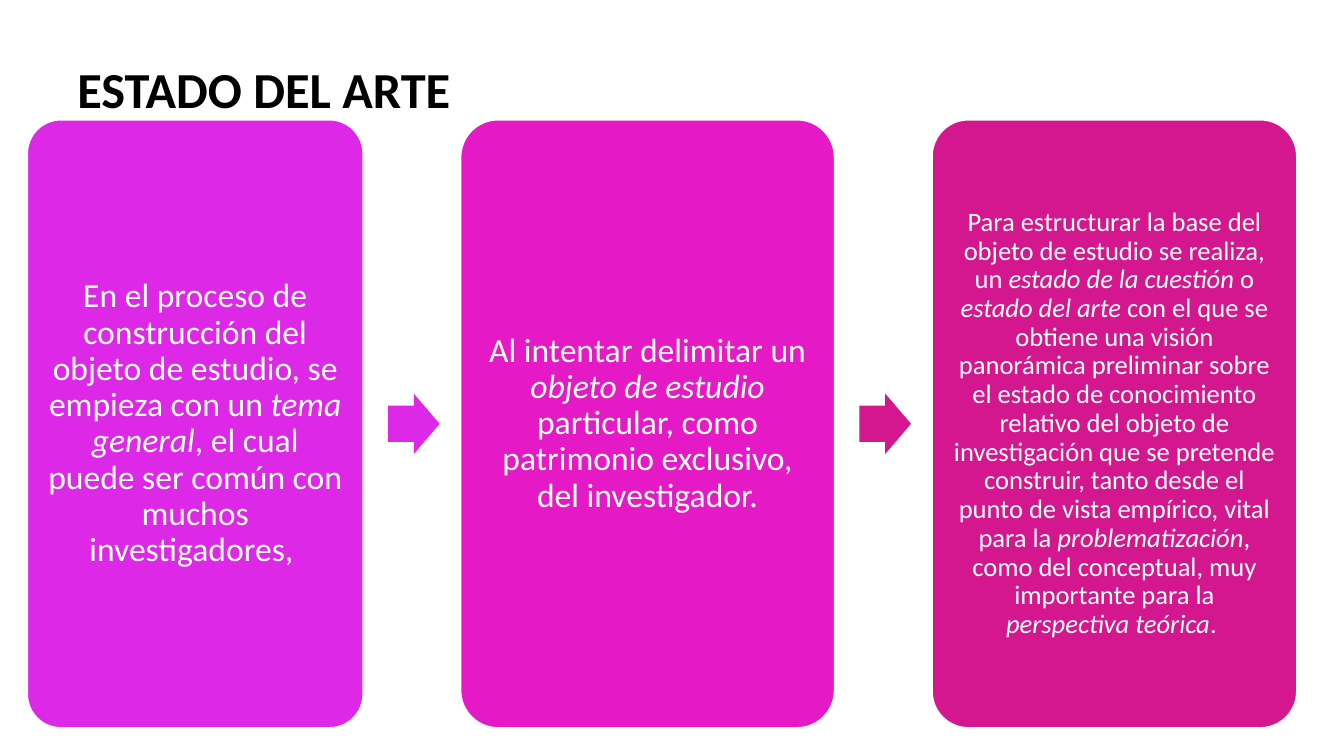
import pptx
import pptx.util
import pptx.dml.color
import pptx.enum.shapes
import pptx.enum.text

Cm = pptx.util.Cm
Pt = pptx.util.Pt
MSO_SHAPE = pptx.enum.shapes.MSO_SHAPE
FONT = "Calibri"
COLORS = {
    "white": "FFFFFF",
    "black": "000000",
    "violet": "DD29E7",
    "magenta": "E519C5",
    "pink": "D5178F",
}
CARD_GAP = 2.46
ARROW_OFFSET, ARROW_W, ARROW_H = 0.63, 1.3, 1.52

# Each card: width, colour, text size, inset, and text pieces alternating plain and italic
CARDS = [
    (8.46, "violet", 24, 0.25, [
        "En el proceso de construcción del objeto de estudio, se empieza con un ",
        "tema general",
        ", el cual puede ser común con muchos investigadores, ",
    ]),
    (9.42, "magenta", 24, 0.25, [
        "Al intentar delimitar un ",
        "objeto de estudio ",
        "particular, como patrimonio exclusivo, del investigador.",
    ]),
    (9.19, "pink", 19, 0.2, [
        "Para estructurar la base del objeto de estudio se realiza, un ",
        "estado de la cuestión ",
        "o ",
        "estado del arte ",
        "con el que se obtiene una visión panorámica preliminar sobre el estado "
        "de conocimiento relativo del objeto de investigación que se pretende "
        "construir, tanto desde el punto de vista empírico, vital para la ",
        "problematización",
        ", como del conceptual, muy importante para la ",
        "perspectiva teórica",
        ". ",
    ]),
]
ARROW_COLORS = ["violet", "pink"]


def rgb(name):
    """Return the named colour."""
    return pptx.dml.color.RGBColor.from_string(COLORS[name])


def format_run(r, size, color, bold=False, italic=False):
    """Apply the slide font to a run."""
    r.font.name = FONT
    r.font.size = Pt(size)
    r.font.bold = bold
    r.font.italic = italic
    r.font.color.rgb = rgb(color)


def add_title(s, x, y, w, h):
    """Place the slide title in the given box."""
    tf = s.shapes.add_textbox(Cm(x), Cm(y), Cm(w), Cm(h)).text_frame
    tf.word_wrap = True
    tf.text = "ESTADO DEL ARTE"
    p = tf.paragraphs[0]
    p.line_spacing = 0.9
    format_run(p.runs[0], 36, "black", bold=True)


def add_filled(s, kind, x, y, w, h, color, adjustments):
    """Place a filled preset shape without shadow."""
    sp = s.shapes.add_shape(kind, Cm(x), Cm(y), Cm(w), Cm(h))
    sp.shadow.inherit = False
    sp.fill.solid()
    sp.fill.fore_color.rgb = rgb(color)
    sp.line.fill.background()
    for i, value in enumerate(adjustments):
        sp.adjustments[i] = value
    return sp


def add_card(s, x, y, w, h, color, size, inset, pieces):
    """Place a rounded card whose text alternates plain and italic pieces."""
    sp = add_filled(s, MSO_SHAPE.ROUNDED_RECTANGLE, x, y, w, h, color, [0.1])
    sp.line.color.rgb = rgb("white")
    sp.line.width = Pt(1)
    tf = sp.text_frame
    tf.word_wrap = True
    tf.vertical_anchor = pptx.enum.text.MSO_ANCHOR.MIDDLE
    tf.margin_left = tf.margin_right = tf.margin_top = tf.margin_bottom = Cm(inset)
    p = tf.paragraphs[0]
    p.alignment = pptx.enum.text.PP_ALIGN.CENTER
    p.line_spacing = 0.9
    for i, piece in enumerate(pieces):
        r = p.add_run()
        r.text = piece
        format_run(r, size, "white", italic=i % 2 == 1)


def add_process(s, x, y, h):
    """Place the row of cards with an arrow in each gap."""
    for i, (w, color, size, inset, pieces) in enumerate(CARDS):
        add_card(s, x, y, w, h, color, size, inset, pieces)
        x += w
        if i < len(ARROW_COLORS):
            add_filled(s, MSO_SHAPE.RIGHT_ARROW, x + ARROW_OFFSET, y + (h - ARROW_H) / 2,
                       ARROW_W, ARROW_H, ARROW_COLORS[i], [0.6, 0.5])
        x += CARD_GAP


def main():
    """Build and save the slide."""
    prs = pptx.Presentation()
    prs.slide_width = Cm(33.87)
    prs.slide_height = Cm(19.05)
    s = prs.slides.add_slide(prs.slide_layouts[6])
    add_title(s, 1.7, 1.52, 29.6, 3.15)
    add_process(s, 0.69, 3.02, 15.32)
    prs.save("out.pptx")


if __name__ == "__main__":
    main()
